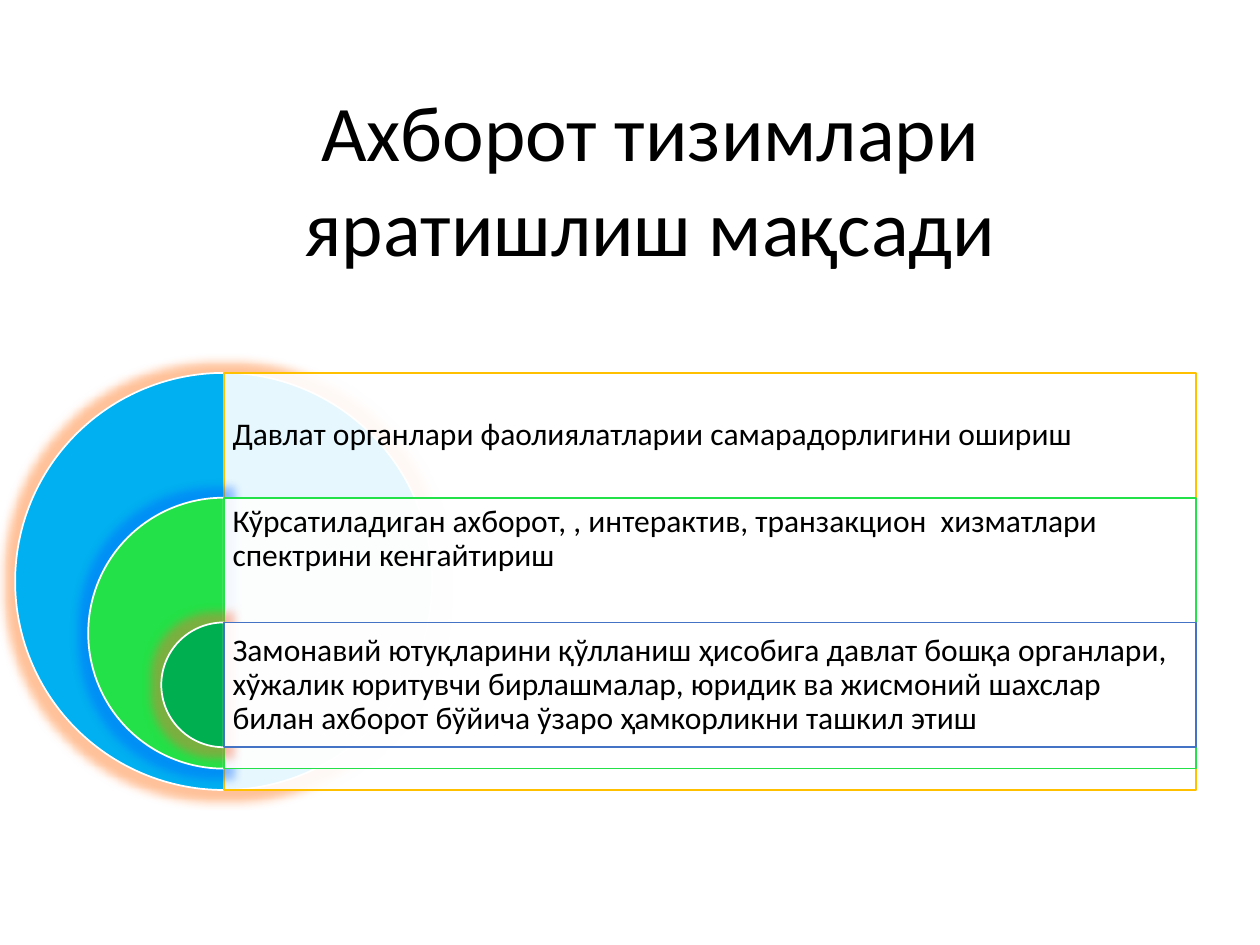
from lxml.etree import SubElement
from pptx import Presentation
from pptx.dml.color import RGBColor
from pptx.enum.shapes import MSO_SHAPE
from pptx.enum.text import MSO_ANCHOR, PP_ALIGN
from pptx.oxml.ns import qn
from pptx.util import Inches, Pt

LEFT, TOP, SIZE, WIDTH, STEP = 0.12, 2.96, 3.31, 7.72, 0.99
# disc diameter, disc fill, glow, frame line, text, space below the text
GOALS = [
    (3.31, "00B0F0", "FF6600", "FFC000",
     "Давлат органлари фаолиялатларии самарадорлигини ошириш", 0.07),
    (2.15, "23E148", "0060FF", "23E148",
     "Кўрсатиладиган ахборот, , интерактив, транзакцион  хизматлари "
     "спектрини кенгайтириш", 0.4),
    (0.99, "00B050", "FF6633", "4472C4",
     "Замонавий ютуқларини қўлланиш ҳисобига давлат бошқа органлари, "
     "хўжалик юритувчи бирлашмалар, юридик ва жисмоний шахслар билан "
     "ахборот бўйича ўзаро ҳамкорликни ташкил этиш", 0.07),
]


def paint(color, code):
    color.rgb = RGBColor.from_string(code)


def add_alpha(node, percent):
    SubElement(node, qn("a:alpha"), val=str(percent * 1000))


def add_shape(slide, kind, box, fill, line):
    shape = slide.shapes.add_shape(kind, *map(Inches, box))
    shape.shadow.inherit = False
    shape.fill.solid()
    paint(shape.fill.fore_color, fill)
    paint(shape.line.color, line)
    shape.line.width = Pt(1)
    return shape


def add_glow(shape, code):
    effects = shape._element.spPr.find(qn("a:effectLst"))
    glow = SubElement(effects, qn("a:glow"), rad=str(Pt(11)))
    add_alpha(SubElement(glow, qn("a:srgbClr"), val=code), 40)


def add_text(slide, box, text, size, anchor):
    frame = slide.shapes.add_textbox(*map(Inches, box)).text_frame
    frame.word_wrap = True
    frame.vertical_anchor = anchor
    frame.text = text
    font = frame.paragraphs[0].runs[0].font
    font.name, font.size = "Calibri", Pt(size)
    paint(font.color, "000000")
    return frame


def add_title(slide, box):
    frame = add_text(slide, box, "Ахборот тизимлари яратишлиш мақсади",
                     45, MSO_ANCHOR.BOTTOM)
    frame.paragraphs[0].alignment = PP_ALIGN.CENTER


def add_disc(slide, mid, top, size, fill, glow, whole):
    kind = MSO_SHAPE.OVAL if whole else MSO_SHAPE.PIE
    disc = add_shape(slide, kind, (mid - size / 2, top, size, size),
                     fill, "FFFFFF")
    if not whole:
        # Left half: 90 to 270 degrees
        disc.adjustments[0], disc.adjustments[1] = 54, 162
    add_glow(disc, glow)


def add_panel(slide, box, line, text, below):
    panel = add_shape(slide, MSO_SHAPE.RECTANGLE, box, "FFFFFF", line)
    add_alpha(panel._element.spPr.find(qn("a:solidFill"))[0], 90)
    left, top, width, _ = box
    frame = add_text(slide, (left, top, width, STEP), text, 18,
                     MSO_ANCHOR.MIDDLE)
    frame.margin_left = frame.margin_right = frame.margin_top = Inches(0.07)
    frame.margin_bottom = Inches(below)
    frame.paragraphs[0].line_spacing = 0.9


def add_goals(slide, left, top):
    mid = left + SIZE / 2
    for i, (size, fill, glow, line, text, below) in enumerate(GOALS):
        y = top + i * STEP
        add_disc(slide, mid, y, size, fill, glow, i == 0)
        add_panel(slide, (mid, y, WIDTH, size), line, text, below)


def main():
    deck = Presentation()
    deck.slide_width, deck.slide_height = Inches(10), Inches(7.5)
    slide = deck.slides.add_slide(deck.slide_layouts[6])
    add_title(slide, (0.91, 0.6, 8.5, 1.61))
    add_goals(slide, LEFT, TOP)
    deck.save("out.pptx")


if __name__ == "__main__":
    main()
